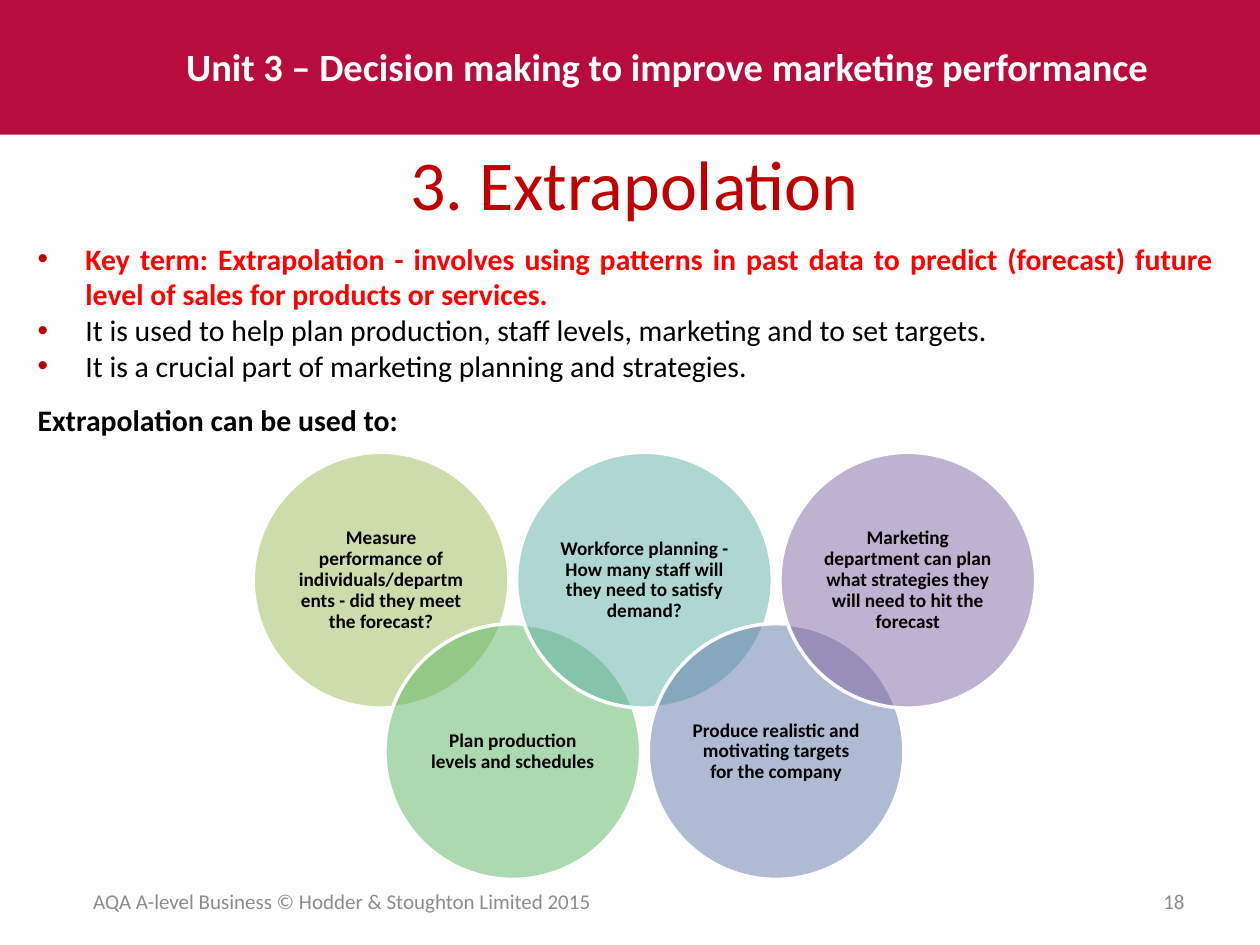
import pptx
import pptx.dml.color
import pptx.enum.shapes
import pptx.enum.text
import pptx.oxml
import pptx.oxml.ns
import pptx.util
from dataclasses import dataclass
from lxml import etree

Inches = pptx.util.Inches
Pt = pptx.util.Pt
qn = pptx.oxml.ns.qn
Align = pptx.enum.text.PP_ALIGN
Anchor = pptx.enum.text.MSO_ANCHOR
Shape = pptx.enum.shapes.MSO_SHAPE


@dataclass(frozen=True)
class Theme:
    font: str = "Calibri"
    band: str = "B70C3C"
    title: str = "C00000"
    key: str = "FF0000"
    ink: str = "000000"
    pale: str = "FFFFFF"
    grey: str = "8C8C8C"
    unit_size: float = 22
    title_size: float = 40
    body_size: float = 17
    ring_size: float = 11
    foot_size: float = 12


THEME = Theme()

# Circles from left to right, alternating upper and lower row
USES = [
    ("Measure performance of individuals/departments - did they meet the forecast?", "9BBB59"),
    ("Plan production levels and schedules", "5CB565"),
    ("Workforce planning - How many staff will they need to satisfy demand?", "5EAFA6"),
    ("Produce realistic and motivating targets for the company", "6179A8"),
    ("Marketing department can plan what strategies they will need to hit the forecast", "8064A2"),
]


def rgb(code):
    return pptx.dml.color.RGBColor.from_string(code)


def add_box(slide, left, top, width, height, anchor=Anchor.TOP, inset=None):
    box = slide.shapes.add_textbox(Inches(left), Inches(top), Inches(width), Inches(height))
    frame = box.text_frame
    frame.word_wrap = True
    frame.vertical_anchor = anchor
    if inset is not None:
        frame.margin_left = frame.margin_right = Inches(inset)
        frame.margin_top = frame.margin_bottom = Inches(inset)
    return frame


def add_bullet(para, color, indent=0.38):
    props = para._p.get_or_add_pPr()
    props.set("marL", str(Inches(indent)))
    props.set("indent", str(-Inches(indent)))
    tint = etree.SubElement(props, qn("a:buClr"))
    etree.SubElement(tint, qn("a:srgbClr"), val=color)
    etree.SubElement(props, qn("a:buFont"), typeface="Arial")
    etree.SubElement(props, qn("a:buChar"), char="•")


def add_text(frame, text, size, color=THEME.ink, bold=False, align=Align.LEFT,
             bullet=None, before=None, lines=None):
    # The first call fills the paragraph that the frame already has
    para = frame.paragraphs[0] if not frame.text else frame.add_paragraph()
    para.alignment = align
    if before is not None:
        para.space_before = Pt(before)
    if lines is not None:
        para.line_spacing = lines
    if bullet:
        add_bullet(para, bullet)
    run = para.add_run()
    run.text = text
    run.font.name = THEME.font
    run.font.size = Pt(size)
    run.font.bold = bold
    run.font.color.rgb = rgb(color)


def add_form(slide, kind, left, top, width, height, fill, line=None, alpha=None):
    form = slide.shapes.add_shape(kind, Inches(left), Inches(top), Inches(width), Inches(height))
    form.shadow.inherit = False
    form.fill.solid()
    form.fill.fore_color.rgb = rgb(fill)
    if alpha is not None:
        tint = form._element.spPr.find(qn("a:solidFill")).find(qn("a:srgbClr"))
        etree.SubElement(tint, qn("a:alpha"), val=str(alpha * 1000))
    if line:
        form.line.color.rgb = rgb(line)
        form.line.width = Pt(2)
    else:
        form.line.fill.background()


def add_head(slide):
    add_form(slide, Shape.RECTANGLE, 0, 0, 10, 1.07, THEME.band)
    unit = add_box(slide, 1.38, 0.29, 8.03, 0.47)
    add_text(unit, "Unit 3 – Decision making to improve marketing performance",
             THEME.unit_size, color=THEME.pale, bold=True)
    title = add_box(slide, 0.28, 1.07, 9.51, 0.75, anchor=Anchor.MIDDLE)
    add_text(title, "3. Extrapolation", THEME.title_size, color=THEME.title, align=Align.CENTER)


def add_body(slide):
    body = add_box(slide, 0.2, 1.86, 9.53, 1.73)
    points = [
        ("Key term: Extrapolation - involves using patterns in past data to predict "
         "(forecast) future level of sales for products or services.", THEME.key, True),
        ("It is used to help plan production, staff levels, marketing and to set targets.",
         THEME.ink, False),
        ("It is a crucial part of marketing planning and strategies.", THEME.ink, False),
    ]
    for text, color, bold in points:
        add_text(body, text, THEME.body_size, color=color, bold=bold,
                 align=Align.JUSTIFY, bullet=THEME.title)
    add_text(body, "Extrapolation can be used to:", THEME.body_size, bold=True, before=10.4)


def add_rings(slide, left=2.01, top=3.59, size=2.03, step=1.045, drop=1.36, inner=1.44):
    pad = (size - inner) / 2
    for i, (text, fill) in enumerate(USES):
        x, y = left + i * step, top + i % 2 * drop
        add_form(slide, Shape.OVAL, x, y, size, size, fill, line=THEME.pale, alpha=50)
        label = add_box(slide, x + pad, y + pad, inner, inner, anchor=Anchor.MIDDLE, inset=0.05)
        add_text(label, text, THEME.ring_size, bold=True, align=Align.CENTER, lines=0.9)


def add_foot(slide):
    parts = [
        (0.51, 4.41, "AQA A-level Business © Hodder & Stoughton Limited 2015", Align.CENTER),
        (7.17, 2.33, "18", Align.RIGHT),
    ]
    for left, width, text, align in parts:
        foot = add_box(slide, left, 6.95, width, 0.4, anchor=Anchor.MIDDLE)
        add_text(foot, text, THEME.foot_size, color=THEME.grey, align=align)


def main():
    deck = pptx.Presentation()
    deck.slide_width, deck.slide_height = Inches(10), Inches(7.5)
    slide = deck.slides.add_slide(deck.slide_layouts[6])
    add_head(slide)
    add_body(slide)
    add_rings(slide)
    add_foot(slide)
    deck.save("out.pptx")


if __name__ == "__main__":
    main()
